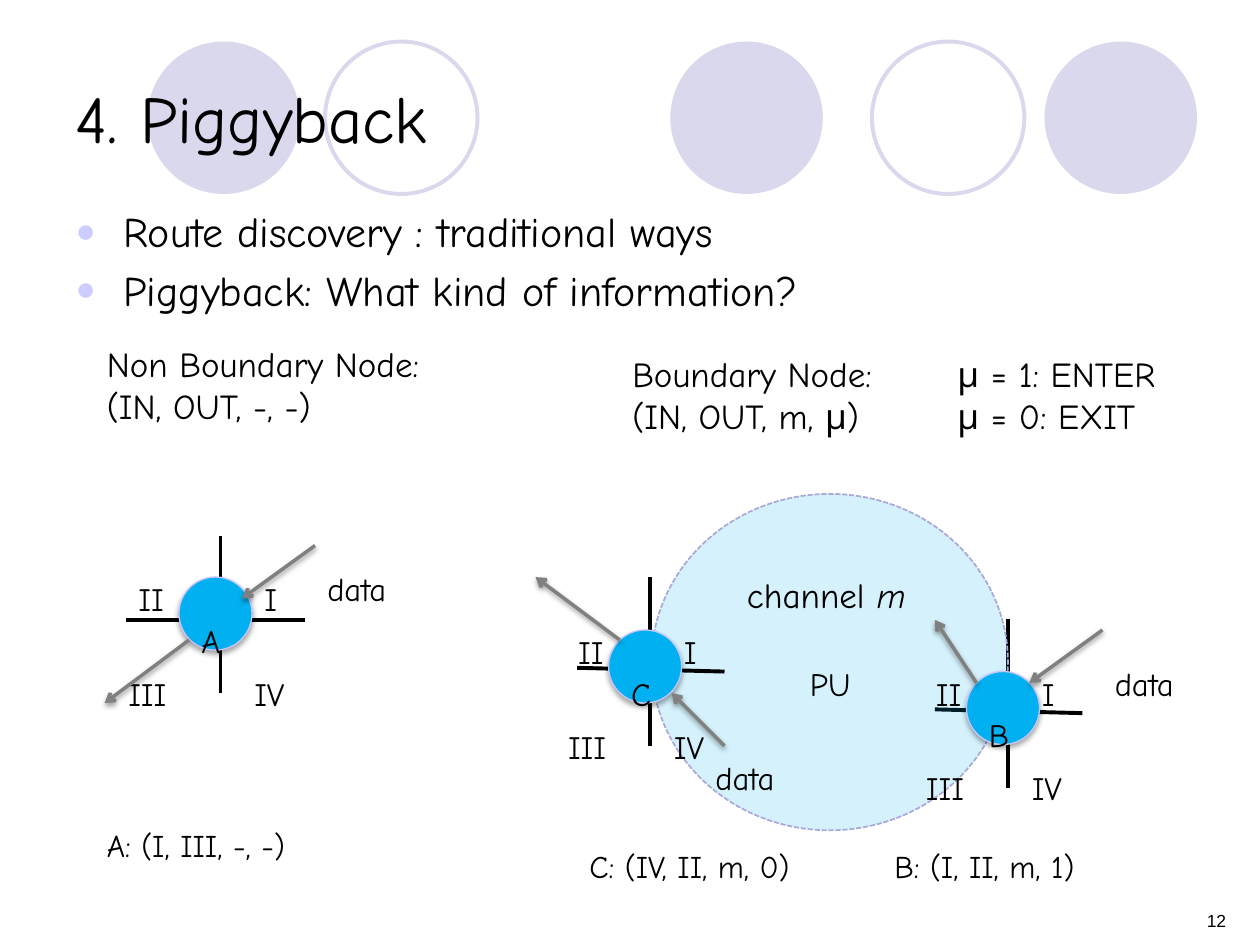
from lxml import etree
from pptx import Presentation
from pptx.dml.color import RGBColor
from pptx.enum.dml import MSO_LINE
from pptx.enum.shapes import MSO_CONNECTOR, MSO_SHAPE
from pptx.enum.text import MSO_ANCHOR, MSO_AUTO_SIZE, PP_ALIGN
from pptx.oxml.ns import qn
from pptx.util import Inches, Pt

STRAIGHT = MSO_CONNECTOR.STRAIGHT
OVAL = MSO_SHAPE.OVAL
SYS_DASH = MSO_LINE.SQUARE_DOT
MIDDLE, TOP = MSO_ANCHOR.MIDDLE, MSO_ANCHOR.TOP
NO_AUTOFIT = MSO_AUTO_SIZE.NONE
LEFT, RIGHT = PP_ALIGN.LEFT, PP_ALIGN.RIGHT

BLACK = RGBColor(0x00, 0x00, 0x00)
GRAY = RGBColor(0x80, 0x80, 0x80)
LAVENDER = RGBColor(0xD9, 0xD8, 0xEC)
NODE_BLUE = RGBColor(0x00, 0xB0, 0xF0)
NODE_EDGE = RGBColor(0xC6, 0xC6, 0xFB)
AREA_EDGE = RGBColor(0xA9, 0xA9, 0xDA)
BULLET = "CCCCFF"
FONT = "Comic Neue"
NODE_SIZE = 0.58


def add_run(paragraph, text, size, font=FONT, italic=None, lowered=False):
    run = paragraph.add_run()
    run.text = text
    run.font.size = Pt(size)
    run.font.name = font
    run.font.italic = italic
    run.font.color.rgb = BLACK
    if lowered:
        run._r.get_or_add_rPr().set("baseline", "-25000")


def add_text(slide, box, lines, size=20, font=FONT, align=LEFT, lowered=False):
    """Each line is a list of (text, italic) runs or a plain string."""
    frame = slide.shapes.add_textbox(*map(Inches, box)).text_frame
    frame.word_wrap = True
    for i, line in enumerate(lines):
        paragraph = frame.add_paragraph() if i else frame.paragraphs[0]
        paragraph.alignment = align
        runs = [(line, None)] if isinstance(line, str) else line
        for text, italic in runs:
            add_run(paragraph, text, size, font, italic, lowered)


def add_label(slide, text, left, top, width, height=0.42):
    add_text(slide, (left, top, width, height), [text], 32, lowered=True)


def add_shadow(effects, alpha, distance):
    shadow = etree.SubElement(effects, qn("a:outerShdw"), blurRad=str(Pt(3.1)),
                              dist=str(Pt(distance)), dir="5400000", rotWithShape="0")
    color = etree.SubElement(shadow, qn("a:srgbClr"), val=str(BLACK))
    etree.SubElement(color, qn("a:alpha"), val=str(alpha * 1000))


def add_oval(slide, box, fill=None, line=None, width=1):
    oval = slide.shapes.add_shape(OVAL, *map(Inches, box))
    oval.shadow.inherit = False
    if fill is None:
        oval.fill.background()
    else:
        oval.fill.solid()
        oval.fill.fore_color.rgb = fill
    if line is None:
        oval.line.fill.background()
    else:
        oval.line.color.rgb = line
        oval.line.width = Pt(width)
    return oval


def add_line(slide, start, end, color=BLACK, width=2.25):
    line = slide.shapes.add_connector(STRAIGHT, *map(Inches, (*start, *end)))
    line.line.color.rgb = color
    line.line.width = Pt(width)
    return line, etree.SubElement(line.element.spPr, qn("a:effectLst"))


def add_arrow(slide, start, end):
    arrow, effects = add_line(slide, start, end, GRAY, 2)
    etree.SubElement(arrow.line._get_or_add_ln(), qn("a:tailEnd"), type="arrow")
    add_shadow(effects, 38, 1.6)


def add_axes(slide, x, y, horizontal, rise):
    """Axes around the node whose box starts at (x, y)."""
    (x1, y1), (x2, y2) = horizontal
    add_line(slide, (x + x1, y + y1), (x + x2, y + y2))
    add_line(slide, (x + 0.33, y + 0.92), (x + 0.33, y - rise))


def add_node(slide, name, x, y, rotation=0, spread=0.0):
    """Node disc with its name and the four quadrant labels."""
    disc = add_oval(slide, (x, y, NODE_SIZE, NODE_SIZE), NODE_BLUE, NODE_EDGE, 0.75)
    disc.rotation = rotation
    add_shadow(disc.element.spPr.find(qn("a:effectLst")), 35, 1.8)
    add_label(slide, name, x + 0.08, y, 0.42)
    add_label(slide, "I", x + 0.5 + spread, y - 0.33, 0.42)
    add_label(slide, "II", x - 0.34 - spread, y - 0.33, 0.67)
    add_label(slide, "III", x - 0.42 - spread, y + 0.42, 0.75)
    add_label(slide, "IV", x + 0.42 + spread, y + 0.42, 0.58)


def place(placeholder, box, anchor):
    placeholder.left, placeholder.top, placeholder.width, placeholder.height = map(Inches, box)
    frame = placeholder.text_frame
    frame.auto_size = NO_AUTOFIT
    frame.vertical_anchor = anchor
    return frame


def fill_title(title):
    paragraph = place(title, (0.5, 0.3, 9, 1.25), MIDDLE).paragraphs[0]
    paragraph.alignment = LEFT
    add_run(paragraph, "4. Piggyback", 38)


def fill_body(body, items):
    frame = place(body, (0.5, 1.58, 9, 4.95), TOP)
    for i, item in enumerate(items):
        paragraph = frame.add_paragraph() if i else frame.paragraphs[0]
        add_run(paragraph, item, 24)
        props = paragraph._p.get_or_add_pPr()
        props.set("marL", str(Inches(0.38)))
        props.set("indent", str(-Inches(0.38)))
        color = etree.SubElement(props, qn("a:buClr"))
        etree.SubElement(color, qn("a:srgbClr"), val=BULLET)
        etree.SubElement(props, qn("a:buSzPct"), val="80000")
        etree.SubElement(props, qn("a:buFont"), typeface="Arial")
        etree.SubElement(props, qn("a:buChar"), char="●")


def add_banner(slide):
    for left in (5.32, 8.29, 1.17):
        add_oval(slide, (left, 0.33, 1.21, 1.21), LAVENDER)
    for left in (6.92, 2.58):
        add_oval(slide, (left, 0.33, 1.21, 1.21), line=LAVENDER, width=2.25)


def add_coverage(slide):
    area = add_oval(slide, (5.17, 3.92, 2.83, 2.67), NODE_BLUE, AREA_EDGE)
    area.line.dash_style = SYS_DASH
    color = area.element.spPr.find(qn("a:solidFill")).find(qn("a:srgbClr"))
    etree.SubElement(color, qn("a:alpha"), val="17000")
    add_label(slide, "PU", 6.33, 4.92, 0.67, 0.5)
    add_text(slide, (5.83, 4.5, 1.92, 0.42), [[("channel ", None), ("m", True)]])


def main():
    prs = Presentation()
    prs.slide_width, prs.slide_height = Inches(10), Inches(7.5)
    slide = prs.slides.add_slide(prs.slide_layouts[1])
    title, body = slide.shapes.title, slide.placeholders[1]

    # Banner circles lie behind the title and list
    add_banner(slide)
    for placeholder in (body, title):
        placeholder.element.getparent().append(placeholder.element)
    fill_body(body, ["Route discovery : traditional ways",
                     "Piggyback: What kind of information?"])
    fill_title(title)
    add_text(slide, (7.5, 7.17, 2.33, 0.5), ["12"], 10, "Arial", RIGHT)

    # Tuple formats
    add_text(slide, (0.75, 2.67, 3.33, 0.42), ["Non Boundary Node:", "(IN, OUT, -, -)"])
    add_text(slide, (4.92, 2.75, 3.33, 0.42), ["Boundary Node:", "(IN, OUT, m, μ)"])
    add_text(slide, (7.5, 2.75, 3.33, 0.42), ["μ = 1: ENTER", "μ = 0: EXIT"])

    # Nodes, with the coverage area between B's axes and its disc
    tilted = ((-0.25, 0.3), (0.92, 0.33))
    add_axes(slide, 1.42, 4.58, ((-0.42, 0.34), (1, 0.34)), 0.33)
    add_node(slide, "A", 1.42, 4.58, spread=0.08)
    add_axes(slide, 7.67, 5.33, tilted, 0.42)
    add_coverage(slide)
    add_node(slide, "B", 7.67, 5.33, rotation=3.1)
    add_axes(slide, 4.83, 5, tilted, 0.42)
    add_node(slide, "C", 4.83, 5, rotation=3.1)

    # Data flow into and out of A, B and C
    for start, end in [((2.5, 4.33), (1.92, 4.75)), ((1.5, 5.08), (0.83, 5.58)),
                       ((8.75, 5), (8.17, 5.42)), ((7.75, 5.42), (7.42, 4.92)),
                       ((5.75, 5.92), (5.33, 5.5)), ((4.92, 5.08), (4.25, 4.58))]:
        add_arrow(slide, start, end)
    for left, top in [(2.5, 4.17), (8.75, 4.92), (5.58, 5.67)]:
        add_label(slide, "data", left, top, 1)

    # Resulting tuples
    for text, left, top, width in [("A: (I, III, -, -)", 0.75, 6.51, 2.17),
                                   ("B: (I, II, m, 1)", 7, 6.67, 2),
                                   ("C: (IV, II, m, 0)", 4.58, 6.67, 2.33)]:
        add_text(slide, (left, top, width, 0.4), [text], 18)

    prs.save("out.pptx")


if __name__ == "__main__":
    main()
